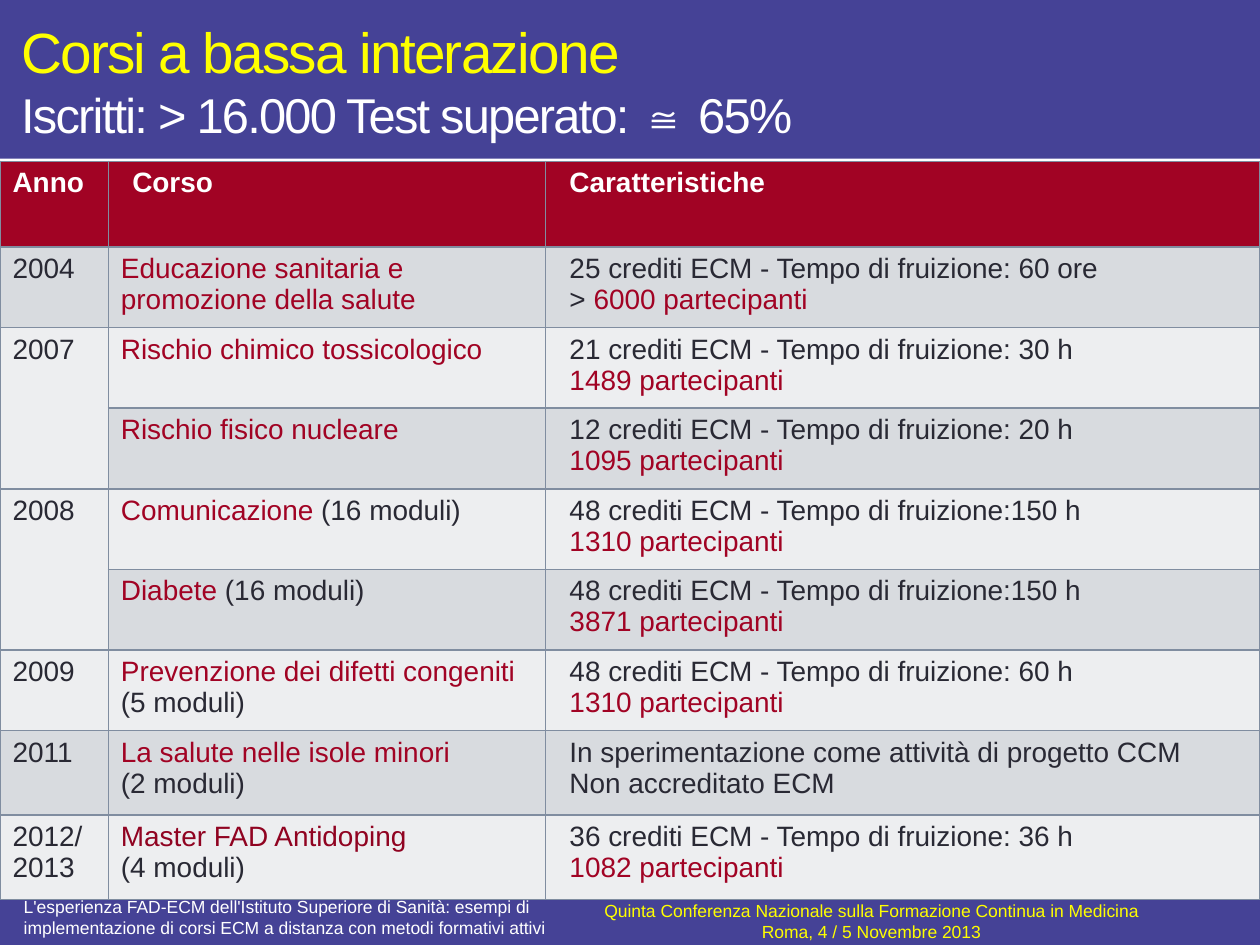
from lxml.etree import SubElement
from pptx import Presentation
from pptx.dml.color import RGBColor
from pptx.enum.shapes import MSO_SHAPE as Shape
from pptx.enum.text import MSO_ANCHOR as Anchor, PP_ALIGN as Align
from pptx.oxml import parse_xml
from pptx.oxml.ns import nsdecls, qn
from pptx.util import Inches, Pt

COLORS = {
    "band": "454296", "yellow": "FFFF00", "white": "FFFFFF",
    "red": "A10324", "wine": "900321", "ink": "292934",
    "dark_row": "D8DBDF", "light_row": "EDEEF0", "border": "808DA0",
}
FONT = "Arial"
WIDTH, HEIGHT = 10, 7.5
COLUMNS = [0.86, 3.47, 5.67]
ROWS = [0.68] + [0.64] * 6 + [0.67] * 2
INDENT = 0.09

# Year (empty where the one above continues), course, course colour, features.
# Text between asterisks takes the accent colour.
COURSES = [
    ("2004", ["*Educazione sanitaria e promozione della salute*"], "red",
     ["25 crediti ECM - Tempo di fruizione: 60 ore", "> *6000 partecipanti*"]),
    ("2007", ["*Rischio chimico tossicologico*"], "red",
     ["21 crediti ECM - Tempo di fruizione: 30 h", "*1489 partecipanti*"]),
    ("", ["*Rischio fisico nucleare*"], "red",
     ["12 crediti ECM - Tempo di fruizione: 20 h", "*1095 partecipanti*"]),
    ("2008", ["*Comunicazione *(16 moduli)"], "red",
     ["48 crediti ECM - Tempo di fruizione:150 h", "*1310 partecipanti*"]),
    ("", ["*Diabete *(16 moduli)"], "red",
     ["48 crediti ECM - Tempo di fruizione:150 h", "*3871 partecipanti*"]),
    ("2009", ["*Prevenzione dei difetti congeniti*", "(5 moduli)"], "red",
     ["48 crediti ECM - Tempo di fruizione: 60 h", "*1310 partecipanti*"]),
    ("2011", ["*La salute nelle isole minori*", "(2 moduli)"], "red",
     ["In sperimentazione come attività di progetto CCM",
      "Non accreditato ECM"]),
    ("2012/2013", ["*Master FAD Antidoping*", "(4 moduli)"], "wine",
     ["36 crediti ECM - Tempo di fruizione: 36 h", "*1082 partecipanti*"]),
]


def color(name):
    return RGBColor.from_string(COLORS[name])


def format_run(run, size, color_name, bold=False):
    run.font.name = FONT
    run.font.size = Pt(size)
    run.font.bold = bold
    run.font.color.rgb = color(color_name)


def add_band(slide, left, top, height):
    band = slide.shapes.add_shape(Shape.RECTANGLE, Inches(left), Inches(top),
                                  Inches(10.03), Inches(height))
    band.shadow.inherit = False
    band.fill.solid()
    band.fill.fore_color.rgb = color("band")
    band.line.fill.background()


def add_text(slide, box, lines, anchor=Anchor.TOP, align=Align.LEFT,
             top_inset=0.05, spacing=0):
    """Each line is (text, size, colour)."""
    shape = slide.shapes.add_textbox(*map(Inches, box))
    frame = shape.text_frame
    frame.word_wrap = True
    frame.vertical_anchor = anchor
    frame.margin_top = Inches(top_inset)
    frame.text = "\n".join(text for text, _, _ in lines)
    for paragraph, (_, size, color_name) in zip(frame.paragraphs, lines):
        paragraph.alignment = align
        for run in paragraph.runs:
            format_run(run, size, color_name)
            if spacing:
                run.font._element.set("spc", str(spacing))


def set_borders(cell):
    properties = cell._tc.get_or_add_tcPr()
    for index, side in enumerate(("lnL", "lnR", "lnT", "lnB")):
        line = parse_xml(f'<a:{side} {nsdecls("a")} w="12700"/>')
        fill = SubElement(line, qn("a:solidFill"))
        SubElement(fill, qn("a:srgbClr"), val=COLORS["border"])
        properties.insert(index, line)


def fill_cell(cell, lines, fill, ink="ink", accent="red", bold=False, indent=0):
    cell.fill.solid()
    cell.fill.fore_color.rgb = color(fill)
    set_borders(cell)
    frame = cell.text_frame
    frame.text = "\n".join(lines)
    for paragraph, line in zip(frame.paragraphs, lines):
        paragraph.text = ""
        paragraph._p.get_or_add_pPr().set("marL", str(Inches(indent)))
        for index, part in enumerate(line.split("*")):
            if part:
                run = paragraph.add_run()
                run.text = part
                format_run(run, 16, accent if index % 2 else ink, bold)


def add_course_table(slide):
    frame = slide.shapes.add_table(len(ROWS), len(COLUMNS), 0, Inches(1.28),
                                   Inches(WIDTH), Inches(sum(ROWS)))
    table = frame.table
    for column, width in zip(table.columns, COLUMNS):
        column.width = Inches(width)
    for row, height in zip(table.rows, ROWS):
        row.height = Inches(height)

    # Header
    for index, label in enumerate(("Anno", "Corso", "Caratteristiche")):
        fill_cell(table.cell(0, index), [label], "red", ink="white", bold=True,
                  indent=INDENT if index else 0)

    # Courses on alternating rows
    for row, (year, course, accent, features) in enumerate(COURSES, start=1):
        fill = "dark_row" if row % 2 else "light_row"
        fill_cell(table.cell(row, 0), [year], fill)
        fill_cell(table.cell(row, 1), course, fill, accent=accent)
        fill_cell(table.cell(row, 2), features, fill, indent=INDENT)
        if not year:
            table.cell(row - 1, 0).merge(table.cell(row, 0))


def main():
    presentation = Presentation()
    presentation.slide_width = Inches(WIDTH)
    presentation.slide_height = Inches(HEIGHT)
    slide = presentation.slides.add_slide(presentation.slide_layouts[6])

    # Bands behind the title and the footer
    add_band(slide, 0, 7.11, 0.4)
    add_band(slide, -0.01, 0, 1.26)

    # Title
    add_text(slide, (0.07, 0.07, 9.93, 1.08),
             [("Corsi a bassa interazione", 32.4, "yellow"),
              ("Iscritti: > 16.000 Test superato: ≅ 65%", 27.9, "white")],
             anchor=Anchor.MIDDLE, top_inset=0.1, spacing=-100)

    add_course_table(slide)

    # Footer
    add_text(slide, (4.65, 7.13, 4.53, 0.36),
             [("Quinta Conferenza Nazionale sulla Formazione Continua in "
               "Medicina", 10, "yellow"),
              ("Roma, 4 / 5 Novembre 2013", 10, "yellow")],
             anchor=Anchor.MIDDLE, align=Align.CENTER)
    add_text(slide, (0.09, 7.11, 4.46, 0.39),
             [("L'esperienza FAD-ECM dell'Istituto Superiore di Sanità: esempi "
               "di implementazione di corsi ECM a distanza con metodi "
               "formativi attivi", 10, "white")], top_inset=0)

    presentation.save("out.pptx")


if __name__ == "__main__":
    main()
